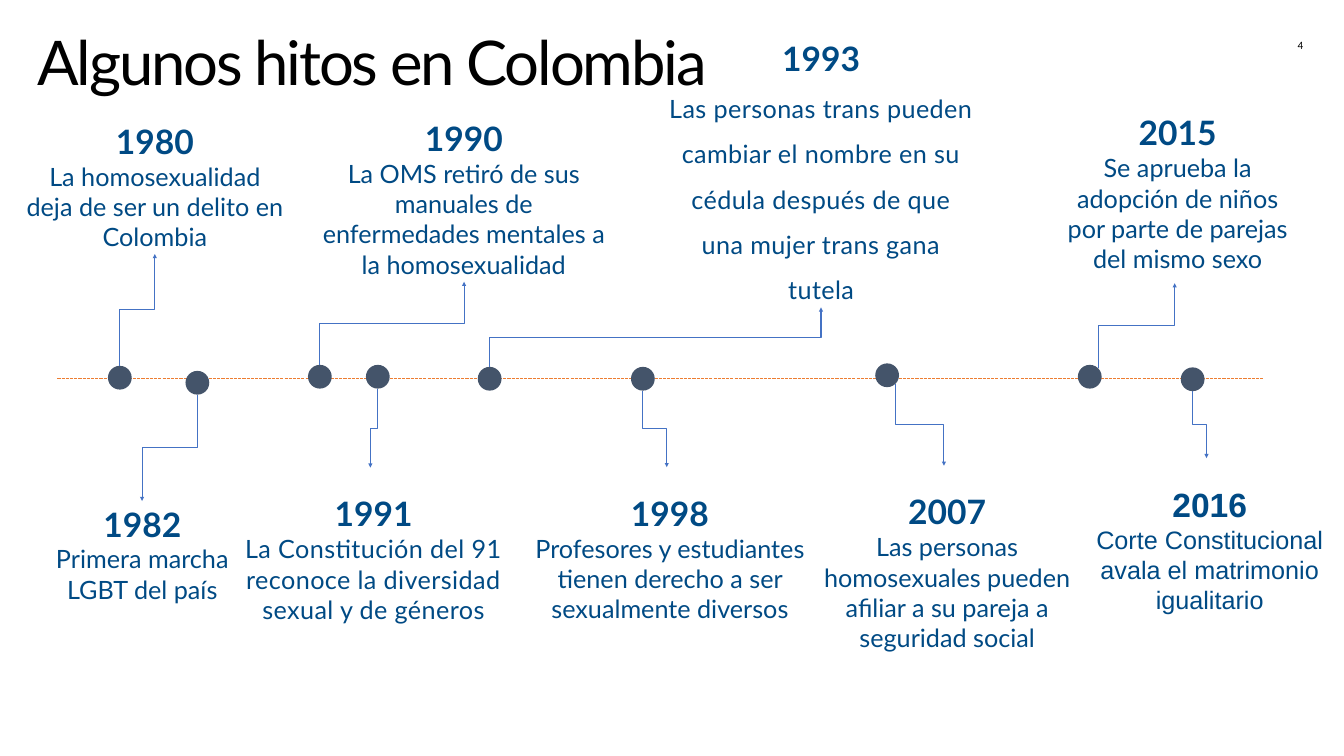
from collections import namedtuple

from lxml.etree import SubElement
from pptx import Presentation
from pptx.dml.color import RGBColor
from pptx.enum.dml import MSO_LINE
from pptx.enum.shapes import MSO_CONNECTOR as CONNECTOR, MSO_SHAPE as SHAPE
from pptx.enum.text import MSO_ANCHOR as ANCHOR, MSO_AUTO_SIZE as AUTO_SIZE, PP_ALIGN as ALIGN
from pptx.oxml.ns import qn
from pptx.util import Pt

NAVY, BLACK, SLATE, ORANGE, BLUE = "004A84", "000000", "44546A", "ED7D31", "4472C4"
TITLE = "Algunos hitos en Colombia"
PAGE = "4"
DOT = 34
AXIS_Y = 540.7

Event = namedtuple(
    "Event",
    "year story box dot tip anchor font tracking leading corner",
    defaults=(ANCHOR.TOP, "Lato", 0, 1, False),
)

EVENTS = [
    Event("1980", "La homosexualidad deja de ser un delito en Colombia",
          (28, 167, 386.6, 196.6), (171.2, 539.6), (221.2, 363), ANCHOR.BOTTOM),
    Event("1982", "Primera marcha LGBT del país",
          (28, 715.7, 350.6, 152.6), (282, 546.8), (203, 715.7)),
    Event("1990", "La OMS retiró de sus manuales de enfermedades mentales a la homosexualidad",
          (444.2, 162.7, 437, 239.8), (457, 538.2), (663, 402.5), ANCHOR.BOTTOM),
    Event("1991", "La Constitución del 91 reconoce la diversidad sexual y de géneros",
          (325.4, 701.3, 416.9, 196.6), (539.8, 538.2), (529.2, 668), tracking=0.6),
    Event("1993", "Las personas trans pueden cambiar el nombre en su cédula después de que "
          "una mujer trans gana tutela",
          (948.2, 54.7, 450, 384.5), (699.6, 541.1), (1173, 439.2), ANCHOR.BOTTOM,
          tracking=0.6, leading=1.5),
    Event("1998", "Profesores y estudiantes tienen derecho a ser sexualmente diversos",
          (742.3, 700.6, 429.8, 196.6), (918.5, 541.1), (952.6, 667.4)),
    Event("2007", "Las personas homosexuales pueden afiliar a su pareja a seguridad social",
          (1161.4, 698.4, 383.8, 239.8), (1267.5, 536.1), (1348.6, 665.3), corner=True),
    Event("2015", "Se aprueba la adopción de niños por parte de parejas del mismo sexo",
          (1508.4, 157, 348.5, 239.8), (1557, 538.2), (1678.3, 404.6), corner=True),
    Event("2016", "Corte Constitucional avala el matrimonio igualitario",
          (1536.5, 687.6, 383.8, 196.6), (1704, 541.8), (1723.7, 654.5), font="Arial"),
]


def rgb(value):
    return RGBColor.from_string(value)


def points(values):
    return [Pt(value) for value in values]


def write(paragraph, words, size, font, color, bold=False, tracking=0, leading=1, align=ALIGN.CENTER):
    paragraph.alignment = align
    paragraph.line_spacing = leading
    run = paragraph.add_run()
    run.text = words
    run.font.size = Pt(size)
    run.font.name = font
    run.font.bold = bold
    run.font.color.rgb = rgb(color)
    if tracking:
        run._r.get_or_add_rPr().set("spc", str(round(tracking * 100)))


def add_text_frame(slide, box, anchor):
    frame = slide.shapes.add_textbox(*points(box)).text_frame
    frame.word_wrap = True
    frame.auto_size = AUTO_SIZE.SHAPE_TO_FIT_TEXT
    frame.vertical_anchor = anchor
    return frame


def add_line(slide, kind, ends, color):
    line = slide.shapes.add_connector(kind, *points(ends))
    line.line.color.rgb = rgb(color)
    line.line.width = Pt(1.5)
    SubElement(line._element.spPr, qn("a:effectLst"))
    return line


def add_arrow(slide, start, tip):
    (x1, y1), (x2, y2) = start, tip
    run, rise = abs(x2 - x1), abs(y2 - y1)
    left, top = (x1 + x2 - rise) / 2, (y1 + y2 - run) / 2
    arrow = add_line(slide, CONNECTOR.ELBOW, (left, top, left + rise, top + run), BLUE)
    upward, rightward = y2 < y1, x2 > x1
    turn = 270 if rightward and not upward else 90
    frame = arrow._element.spPr.find(qn("a:xfrm"))
    frame.set("rot", str(turn * 60000))
    frame.set("flipH", str(int(rightward)))
    frame.set("flipV", str(int(upward)))
    SubElement(arrow.line._get_or_add_ln(), qn("a:tailEnd"), type="triangle")


def add_event(slide, event):
    x, y = event.dot
    radius = DOT / 2
    dot = slide.shapes.add_shape(SHAPE.OVAL, *points((x - radius, y - radius, DOT, DOT)))
    dot.shadow.inherit = False
    dot.fill.solid()
    dot.fill.fore_color.rgb = rgb(SLATE)
    dot.line.fill.background()

    frame = add_text_frame(slide, event.box, event.anchor)
    write(frame.paragraphs[0], event.year, 48, event.font, NAVY, bold=True)
    write(frame.add_paragraph(), event.story, 36, event.font, NAVY,
          tracking=event.tracking, leading=event.leading)

    reach = radius * 0.71 if event.corner else radius
    side = reach if event.corner else 0
    direction = 1 if event.tip[1] > y else -1
    add_arrow(slide, (x + side, y + direction * reach), event.tip)


def main():
    deck = Presentation()
    deck.slide_width, deck.slide_height = Pt(1920.24), Pt(1080)
    slide = deck.slides.add_slide(deck.slide_layouts[5])

    title = slide.shapes.title
    title.left, title.top, title.width, title.height = points((46, 41.8, 1759, 87.8))
    title.text_frame.auto_size = AUTO_SIZE.NONE
    title.text_frame.vertical_anchor = ANCHOR.TOP
    write(title.text_frame.paragraphs[0], TITLE, 88, "Lato", BLACK,
          tracking=-3, leading=0.9, align=ALIGN.LEFT)

    number = add_text_frame(slide, (1829.5, 42.5, 56.9, 33.1), ANCHOR.MIDDLE)
    write(number.paragraphs[0], PAGE, 16, "Calibri", BLACK, tracking=0.6, leading=1.5)

    axis = add_line(slide, CONNECTOR.STRAIGHT, (82, AXIS_Y, 1805, AXIS_Y), ORANGE)
    axis.line.dash_style = MSO_LINE.SQUARE_DOT

    for event in EVENTS:
        add_event(slide, event)

    deck.save("out.pptx")


if __name__ == "__main__":
    main()
